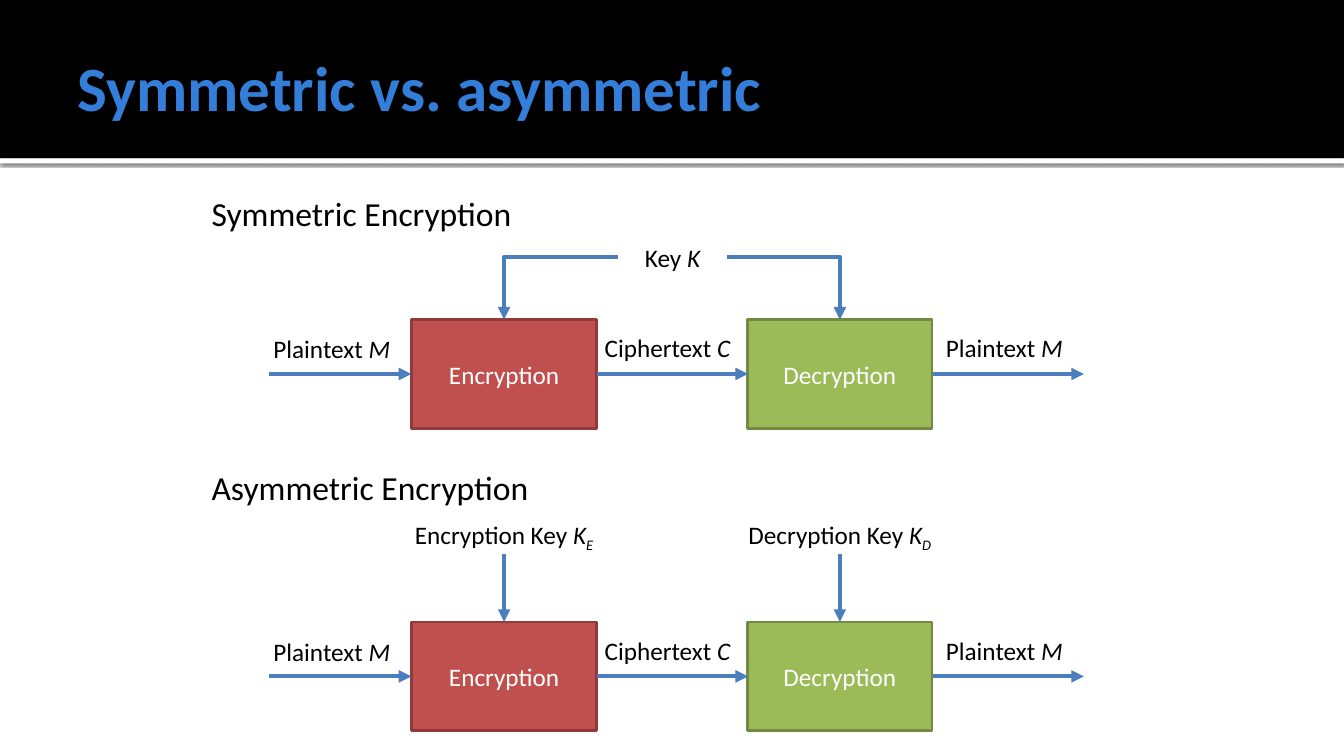
from lxml import etree
from pptx import Presentation
from pptx.dml.color import RGBColor
from pptx.enum.shapes import MSO_CONNECTOR, MSO_SHAPE
from pptx.enum.text import MSO_ANCHOR, MSO_AUTO_SIZE, PP_ALIGN
from pptx.oxml.ns import qn
from pptx.util import Inches, Pt

FONT = "Calibri"
BLACK, WHITE, TITLE_BLUE, ARROW_BLUE = "000000", "FFFFFF", "337ED9", "4B7EBC"
ENCRYPTION_X, DECRYPTION_X = 5, 8.33  # centres of the two boxes
BOX_WIDTH, BOX_HEIGHT = 1.83, 1.08


def color(hex_string):
    return RGBColor.from_string(hex_string)


def add_run(paragraph, text, size=18, fill=BLACK, bold=False, italic=False, baseline=0):
    run = paragraph.add_run()
    run.text = text
    font = run.font
    font.name, font.size = FONT, Pt(size)
    font.bold, font.italic = bold, italic
    font.color.rgb = color(fill)
    if baseline:
        font._element.set("baseline", str(baseline * 1000))


def add_label(shapes, left, top, width, text, symbol="", subscript="",
              size=18, height=0.4, align=PP_ALIGN.CENTER):
    """Add plain text, then an italic symbol with an optional subscript."""
    box = shapes.add_textbox(Inches(left), Inches(top), Inches(width), Inches(height))
    frame = box.text_frame
    frame.word_wrap = True
    frame.auto_size = MSO_AUTO_SIZE.SHAPE_TO_FIT_TEXT
    paragraph = frame.paragraphs[0]
    paragraph.alignment = align
    add_run(paragraph, text, size)
    if symbol:
        add_run(paragraph, symbol, size, italic=True)
    if subscript:
        add_run(paragraph, subscript, size, italic=True, baseline=-25)


def add_rectangle(shapes, left, top, width, height, fill, line=None):
    shape = shapes.add_shape(MSO_SHAPE.RECTANGLE, Inches(left), Inches(top),
                             Inches(width), Inches(height))
    shape.shadow.inherit = False
    shape.fill.solid()
    shape.fill.fore_color.rgb = color(fill)
    if line:
        shape.line.color.rgb = color(line)
        shape.line.width = Pt(2)
    else:
        shape.line.fill.background()
    return shape


def add_step(shapes, center, top, text, fill, line):
    shape = add_rectangle(shapes, center - BOX_WIDTH / 2, top, BOX_WIDTH, BOX_HEIGHT, fill, line)
    frame = shape.text_frame
    frame.vertical_anchor = MSO_ANCHOR.MIDDLE
    paragraph = frame.paragraphs[0]
    paragraph.alignment = PP_ALIGN.CENTER
    add_run(paragraph, text, fill=WHITE)


def add_arrow(shapes, x1, y1, x2, y2):
    """Add a straight arrow, or one with a single corner if both axes change."""
    bent = x1 != x2 and y1 != y2
    kind = MSO_CONNECTOR.ELBOW if bent else MSO_CONNECTOR.STRAIGHT
    arrow = shapes.add_connector(kind, Inches(x1), Inches(y1), Inches(x2), Inches(y2))
    arrow.line.color.rgb = color(ARROW_BLUE)
    arrow.line.width = Pt(3)
    properties = arrow._element.spPr
    if bent:
        properties.find(qn("a:prstGeom")).set("prst", "bentConnector2")
    etree.SubElement(properties.find(qn("a:ln")), qn("a:tailEnd"), type="triangle")
    etree.SubElement(properties, qn("a:effectLst"))


def add_header(slide, text):
    stripe = add_rectangle(slide.shapes, 0, 1.57, 13.33, 0.05, WHITE)
    effects = stripe._element.spPr.find(qn("a:effectLst"))
    shadow = etree.SubElement(effects, qn("a:outerShdw"), blurRad=str(Pt(2.5)),
                              dist=str(Pt(0.8)), dir="5400000", rotWithShape="0")
    shade = etree.SubElement(shadow, qn("a:srgbClr"), val=BLACK)
    etree.SubElement(shade, qn("a:alpha"), val="60000")
    add_rectangle(slide.shapes, 0, 0, 13.33, 1.57, BLACK)

    title = slide.shapes.title
    slide.shapes._spTree.append(title._element)  # bring in front of the band
    title.left, title.top = Inches(0.67), Inches(0.17)
    title.width, title.height = Inches(12), Inches(1.37)
    frame = title.text_frame
    frame.word_wrap = True
    frame.auto_size = MSO_AUTO_SIZE.NONE
    frame.vertical_anchor = MSO_ANCHOR.MIDDLE
    frame.margin_left = Inches(0.1)
    frame.margin_top = frame.margin_right = frame.margin_bottom = Inches(0.05)
    paragraph = frame.paragraphs[0]
    paragraph.alignment = PP_ALIGN.LEFT
    add_run(paragraph, text, 45, TITLE_BLUE, bold=True)


def add_scheme(slide, heading, heading_top, box_top):
    """Add a heading and the flow from plaintext through both boxes; return its group."""
    shapes = slide.shapes.add_group_shape().shapes
    add_label(shapes, 2, heading_top, 3.56, heading, size=24, height=0.5, align=PP_ALIGN.LEFT)
    add_step(shapes, ENCRYPTION_X, box_top, "Encryption", "C0504D", "8E3B39")
    add_step(shapes, DECRYPTION_X, box_top, "Decryption", "9BBB59", "738A42")
    middle = box_top + BOX_HEIGHT / 2
    for start, end in ((2.67, 4.08), (5.92, 7.42), (9.25, 10.75)):
        add_arrow(shapes, start, middle, end, middle)
    for left, offset, text, symbol in ((2.5, 0.09, "Plaintext ", "M"),
                                       (5.83, 0.08, "Ciphertext ", "C"),
                                       (9.17, 0.08, "Plaintext ", "M")):
        add_label(shapes, left, box_top + offset, 1.58, text, symbol)
    return shapes


def add_symmetric(slide):
    box_top = 3.17
    shapes = add_scheme(slide, "Symmetric Encryption", 1.86, box_top)
    add_label(shapes, 6.13, 2.35, 1.08, "Key ", "K")
    for start, center in ((6.13, ENCRYPTION_X), (7.21, DECRYPTION_X)):
        add_arrow(shapes, start, 2.55, center, box_top)


def add_asymmetric(slide):
    box_top = 6.17
    shapes = add_scheme(slide, "Asymmetric Encryption", 4.58, box_top)
    for center, text, subscript in ((ENCRYPTION_X, "Encryption Key ", "E"),
                                    (DECRYPTION_X, "Decryption Key ", "D")):
        add_label(shapes, center - 2.17 / 2, 5.1, 2.17, text, "K", subscript)
        add_arrow(shapes, center, 5.5, center, box_top)


def main():
    presentation = Presentation()
    presentation.slide_width, presentation.slide_height = Inches(13.33), Inches(7.5)
    slide = presentation.slides.add_slide(presentation.slide_layouts[5])
    slide.background.fill.solid()
    slide.background.fill.fore_color.rgb = color(WHITE)
    add_header(slide, "Symmetric vs. asymmetric")
    add_symmetric(slide)
    add_asymmetric(slide)
    presentation.save("out.pptx")


if __name__ == "__main__":
    main()
